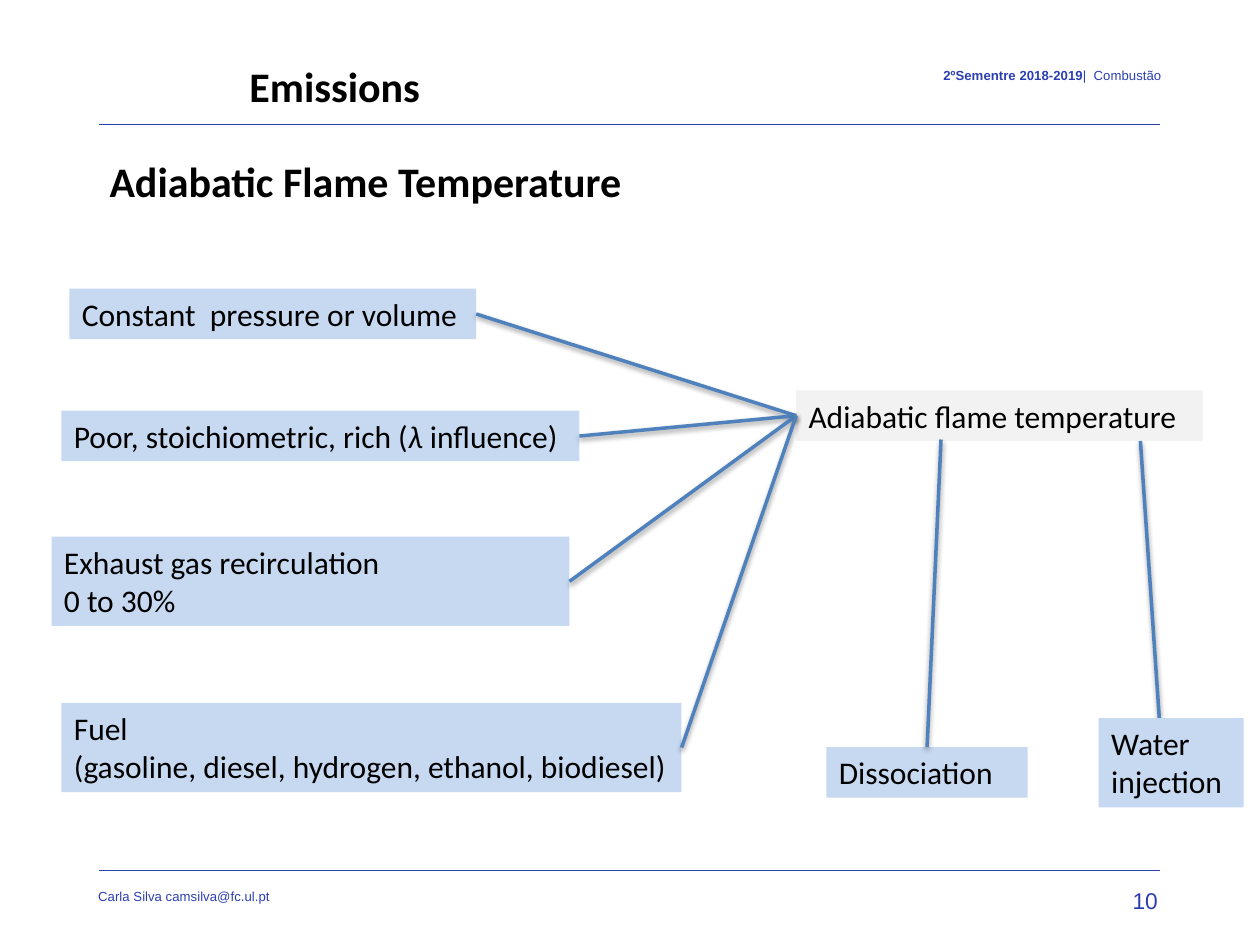
from dataclasses import dataclass

from lxml import etree
from pptx import Presentation
from pptx.dml.color import RGBColor
from pptx.enum import shapes, text
from pptx.oxml import ns
from pptx.util import Cm, Pt

COLORS = {
    "rule": "2C3FB1",
    "text": "000000",
    "target": "F2F2F2",
    "factor": "C6D9F1",
    "link": "4F81BD",
    "shadow": "000000",
}
TOP, LEFT, RIGHT = 0, 1, 3
ONE_LINE, TWO_LINES = 1.02, 1.8


@dataclass
class Run:
    text: str
    bold: bool = False
    italic: bool = False


@dataclass
class Label:
    x: float
    y: float
    w: float
    h: float
    runs: list[Run]
    size: float = 24
    font: str = "Calibri"
    color: str = "text"
    align: text.PP_ALIGN = text.PP_ALIGN.LEFT
    insets: tuple[float, float, float, float] = (0.25, 0.13, 0.25, 0.13)
    raised: bool = False


@dataclass
class Box:
    x: float
    y: float
    w: float
    h: float
    lines: list[list[Run]]
    fill: str = "factor"


def rgb(name: str) -> RGBColor:
    return RGBColor.from_string(COLORS[name])


def write_runs(p, runs: list[Run], size: float, font: str, color: str) -> None:
    for run in runs:
        r = p.add_run()
        r.text = run.text
        r.font.name = font
        r.font.size = Pt(size)
        r.font.bold = run.bold
        r.font.italic = run.italic
        r.font.color.rgb = rgb(color)


def draw_label(s, label: Label) -> None:
    sp = s.shapes.add_textbox(Cm(label.x), Cm(label.y), Cm(label.w), Cm(label.h))
    tf = sp.text_frame
    tf.word_wrap = True
    tf.margin_left, tf.margin_top, tf.margin_right, tf.margin_bottom = map(Cm, label.insets)
    p = tf.paragraphs[0]
    p.alignment = label.align
    write_runs(p, label.runs, label.size, label.font, label.color)
    if label.raised:
        for r in p.runs:
            r.font._element.set("baseline", "30000")


def draw_box(s, box: Box):
    sp = s.shapes.add_shape(
        shapes.MSO_SHAPE.RECTANGLE, Cm(box.x), Cm(box.y), Cm(box.w), Cm(box.h)
    )
    sp.shadow.inherit = False
    sp.fill.solid()
    sp.fill.fore_color.rgb = rgb(box.fill)
    sp.line.fill.background()
    tf = sp.text_frame
    tf.word_wrap = True
    tf.vertical_anchor = text.MSO_ANCHOR.TOP
    for i, runs in enumerate(box.lines):
        p = tf.paragraphs[0] if i == 0 else tf.add_paragraph()
        p.alignment = text.PP_ALIGN.LEFT
        write_runs(p, runs, 18, "Calibri", "text")
    return sp


def draw_line(s, start: tuple[float, float], end: tuple[float, float],
              color: str, width: float, shadow: bool = False):
    cx = s.shapes.add_connector(
        shapes.MSO_CONNECTOR.STRAIGHT, *map(Cm, start), *map(Cm, end)
    )
    cx.line.color.rgb = rgb(color)
    cx.line.width = Pt(width)
    effects = etree.SubElement(cx._element.spPr, ns.qn("a:effectLst"))
    if shadow:
        outer = etree.SubElement(
            effects, ns.qn("a:outerShdw"), blurRad=str(Pt(3.1)), dist=str(Pt(1.6)),
            dir="5400000", rotWithShape="0",
        )
        clr = etree.SubElement(outer, ns.qn("a:srgbClr"), val=COLORS["shadow"])
        etree.SubElement(clr, ns.qn("a:alpha"), val="38000")
    return cx


def draw_link(s, start: tuple[float, float], end: tuple[float, float]):
    return draw_line(s, start, end, "link", 2, shadow=True)


def main() -> None:
    prs = Presentation()
    prs.slide_width, prs.slide_height = Cm(25.4), Cm(19.05)
    s = prs.slides.add_slide(prs.slide_layouts[6])

    for y in (2.51, 17.55):
        draw_line(s, (2, y), (23.39, y), "rule", 0.5)

    small = dict(size=13, font="Arial", color="rule")
    right = text.PP_ALIGN.RIGHT
    labels = [
        Label(5.66, 1.17, 17.75, 0.64,
              [Run("2ºSementre 2018-2019", bold=True), Run("|  Combustão")],
              align=right, insets=(0, 0.13, 0, 0.13), raised=True, **small),
        Label(1.98, 17.73, 17.75, 0.69, [Run("Carla Silva camsilva@fc.ul.pt")],
              insets=(0, 0.13, 0, 0), raised=True, **small),
        Label(17.42, 17.75, 5.92, 1.02, [Run("10")],
              align=right, insets=(0, 0.13, 0, 0.13), **small),
        Label(4.78, 1.09, 10.54, 1.27, [Run("Emissions", bold=True)]),
        Label(1.96, 3, 11.2, 1.27, [Run("Adiabatic Flame Temperature", bold=True)]),
    ]
    for label in labels:
        draw_label(s, label)

    target = draw_box(s, Box(16.05, 7.87, 8.2, ONE_LINE,
                             [[Run("Adiabatic flame temperature")]], "target"))
    factors = [
        Box(1.4, 5.82, 8.2, ONE_LINE, [[Run("Constant  pressure or volume")]]),
        Box(1.24, 8.28, 10.44, ONE_LINE,
            [[Run("Poor, stoichiometric, rich ("), Run("λ ", italic=True), Run("influence)")]]),
        Box(1.04, 10.82, 10.44, TWO_LINES,
            [[Run("Exhaust gas recirculation")], [Run("0 to 30%")]]),
        Box(1.24, 14.17, 12.5, TWO_LINES,
            [[Run("Fuel")], [Run("(gasoline, diesel, hydrogen, ethanol, biodiesel)")]]),
    ]
    for box in factors:
        sp = draw_box(s, box)
        cx = draw_link(s, (box.x + box.w, box.y + box.h / 2), (16.05, 8.38))
        cx.begin_connect(sp, RIGHT)
        cx.end_connect(target, LEFT)

    dissociation = draw_box(s, Box(16.66, 15.06, 4.06, ONE_LINE, [[Run("Dissociation")]]))
    cx = draw_link(s, (18.69, 15.06), (18.97, 8.86))
    cx.begin_connect(dissociation, TOP)

    draw_link(s, (23.37, 14.48), (22.99, 8.89))
    draw_box(s, Box(22.15, 14.48, 2.92, TWO_LINES, [[Run("Water injection")]]))

    prs.save("out.pptx")


if __name__ == "__main__":
    main()
